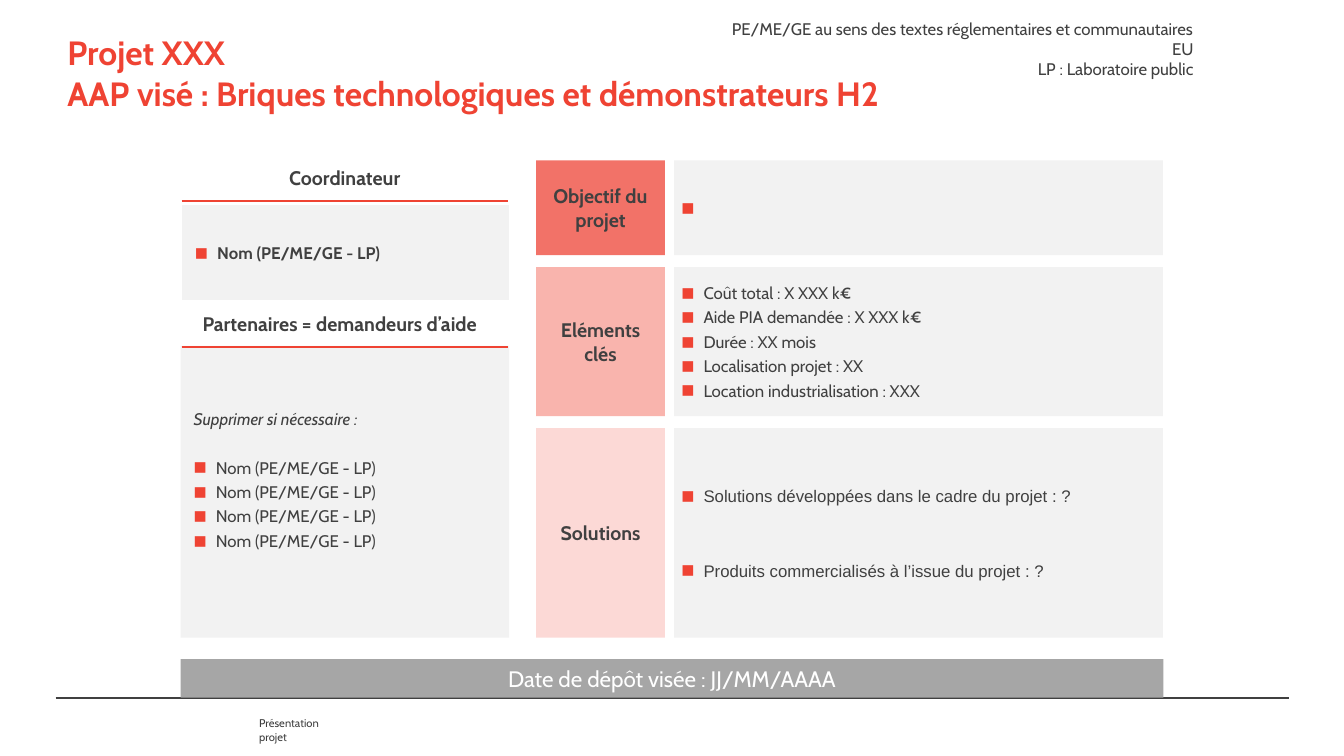
from lxml.etree import SubElement
from pptx import Presentation
from pptx.dml.color import RGBColor
from pptx.enum.shapes import MSO_CONNECTOR, MSO_SHAPE
from pptx.enum.text import MSO_ANCHOR, PP_ALIGN
from pptx.oxml import parse_xml
from pptx.oxml.ns import nsdecls, qn
from pptx.util import Cm, Pt

RED, DARK, PALE, WHITE = "EF4333", "404040", "F2F2F2", "FFFFFF"
colour = RGBColor.from_string


def write_text(frame, lines, size=12, ink=DARK, bold=False, align=PP_ALIGN.LEFT,
               margins=(0.25, 0.13, 0.25, 0.13), anchor=MSO_ANCHOR.MIDDLE,
               bulleted=False, after=0, font="Cabin"):
    """Fill a text frame; margins are left, top, right, bottom in centimetres."""
    frame.word_wrap = True
    frame.vertical_anchor = anchor
    (frame.margin_left, frame.margin_top,
     frame.margin_right, frame.margin_bottom) = map(Cm, margins)
    for index, line in enumerate(lines):
        para = frame.paragraphs[0] if index == 0 else frame.add_paragraph()
        para.text = line
        para.alignment = align
        para.space_before, para.space_after = Pt(0), Pt(after)
        if bulleted:
            properties = para._p.get_or_add_pPr()
            properties.set("marL", str(Cm(0.64)))
            properties.set("indent", str(Cm(-0.56)))
            for xml in (f'<a:buClr {nsdecls("a")}><a:srgbClr val="{RED}"/></a:buClr>',
                        f'<a:buSzPct {nsdecls("a")} val="130000"/>',
                        f'<a:buFont {nsdecls("a")} typeface="Arial"/>',
                        f'<a:buChar {nsdecls("a")} char="■"/>'):
                properties.append(parse_xml(xml))
        para.font.name = font
        para.font.size = Pt(size)
        para.font.bold = bold
        para.font.color.rgb = colour(ink)


def add_box(left, top, width, height, fill):
    box = page.shapes.add_shape(MSO_SHAPE.RECTANGLE, Cm(left), Cm(top), Cm(width), Cm(height))
    box.shadow.inherit = False
    box.fill.solid()
    box.fill.fore_color.rgb = colour(fill)
    box.line.fill.background()
    return box.text_frame


deck = Presentation()
deck.slide_width, deck.slide_height = Cm(33.87), Cm(19.05)
page = deck.slides.add_slide(deck.slide_layouts[5])

# Title, legend and footer
title = page.shapes.title
title.left, title.top, title.width, title.height = Cm(1.7), Cm(0.76), Cm(30.48), Cm(2.13)
write_text(title.text_frame, ["Projet XXX\vAAP visé : Briques technologiques et démonstrateurs H2"],
           size=24, ink=RED, bold=True, margins=(0, 0.13, 0, 0.13))

legend = page.shapes.add_textbox(Cm(17.93), Cm(0.33), Cm(12.4), Cm(1.27))
write_text(legend.text_frame, ["PE/ME/GE au sens des textes réglementaires et communautaires EU",
                               "LP : Laboratoire public"],
           align=PP_ALIGN.RIGHT, anchor=MSO_ANCHOR.TOP)

footer = page.shapes.add_textbox(Cm(6.53), Cm(18.06), Cm(2.24), Cm(0.33))
write_text(footer.text_frame, ["Présentation projet"], size=8, margins=(0, 0, 0, 0),
           anchor=MSO_ANCHOR.TOP)

# Left column: coordinator and partners
LEFT, WIDTH, HEADING_HEIGHT = 4.55, 8.28, 1.12
partners = add_box(LEFT, 8.71, WIDTH, 7.36, PALE)
write_text(partners, ["Supprimer si nécessaire :"] + ["Nom (PE/ME/GE - LP)"] * 4,
           margins=(0.25, 0.13, 0.25, 0.74), bulleted=True, after=3)
note = partners.paragraphs[0]
note.font.italic = True
note.space_after = Pt(20.4)
note_properties = note._p.pPr
note_properties.set("marL", str(Cm(0.08)))
note_properties.set("indent", "0")
for tag in ("a:buClr", "a:buSzPct", "a:buFont", "a:buChar"):
    note_properties.remove(note_properties.find(qn(tag)))

table = page.shapes.add_table(1, 1, Cm(LEFT + 0.03), Cm(5.16), Cm(8.25), Cm(2.44)).table
table.first_row = table.horz_banding = False
cell = table.cell(0, 0)
cell.vertical_anchor = MSO_ANCHOR.MIDDLE
write_text(cell.text_frame, ["Nom (PE/ME/GE - LP)"], bold=True, bulleted=True, after=3)
border = SubElement(cell._tc.get_or_add_tcPr(), qn("a:lnB"), w=str(Pt(3)))
border.append(parse_xml(f'<a:solidFill {nsdecls("a")}><a:srgbClr val="{WHITE}"/></a:solidFill>'))
cell.fill.solid()
cell.fill.fore_color.rgb = colour(PALE)

rules = [(1.4, 32.49, 17.58, DARK)]
for heading, top, right_margin in (("Coordinateur", 3.91, 0.25),
                                   ("Partenaires = demandeurs d’aide", 7.59, 0.5)):
    write_text(add_box(LEFT, top, WIDTH, HEADING_HEIGHT, WHITE), [heading], size=14, bold=True,
               align=PP_ALIGN.CENTER, margins=(0.25, 0.25, right_margin, 0.25),
               anchor=MSO_ANCHOR.BOTTOM)
    rules.append((LEFT + 0.03, LEFT + WIDTH - 0.03, top + HEADING_HEIGHT + 0.03, RED))

for start, end, height, ink in rules:
    rule = page.shapes.add_connector(MSO_CONNECTOR.STRAIGHT, Cm(start), Cm(height), Cm(end), Cm(height))
    rule.line.color.rgb = colour(ink)
    rule.line.width = Pt(1.5)
    SubElement(rule._element.spPr, qn("a:effectLst"))

# Right column: one labelled row per topic
topics = [
    ("Objectif du projet", "F27268", 2.39, [" "], "Cabin", 3),
    ("Eléments\vclés", "F9B4AD", 3.76,
     ["Coût total : X XXX k€", "Aide PIA demandée : X XXX k€", "Durée : XX mois",
      "Localisation projet : XX", "Location industrialisation : XXX"], "Cabin", 3),
    ("Solutions", "FCD9D6", 5.28,
     ["Solutions développées dans le cadre du projet : ?",
      "Produits commercialisés à l’issue du projet : ?"], "Arial", 39),
]
top = 4.04
for label, fill, height, lines, font, after in topics:
    write_text(add_box(13.51, top, 3.25, height, fill), [label], size=14, bold=True,
               align=PP_ALIGN.CENTER, margins=(0, 0, 0, 0))
    write_text(add_box(16.99, top, 12.32, height, PALE), lines, margins=(0.1, 0.1, 0.1, 0.1),
               bulleted=True, after=after, font=font)
    top += height + 0.3

write_text(add_box(LEFT, 16.61, 24.77, 0.97, "A6A6A6"), ["Date de dépôt visée : JJ/MM/AAAA"],
           size=16, ink=WHITE, align=PP_ALIGN.CENTER)

deck.save("out.pptx")
